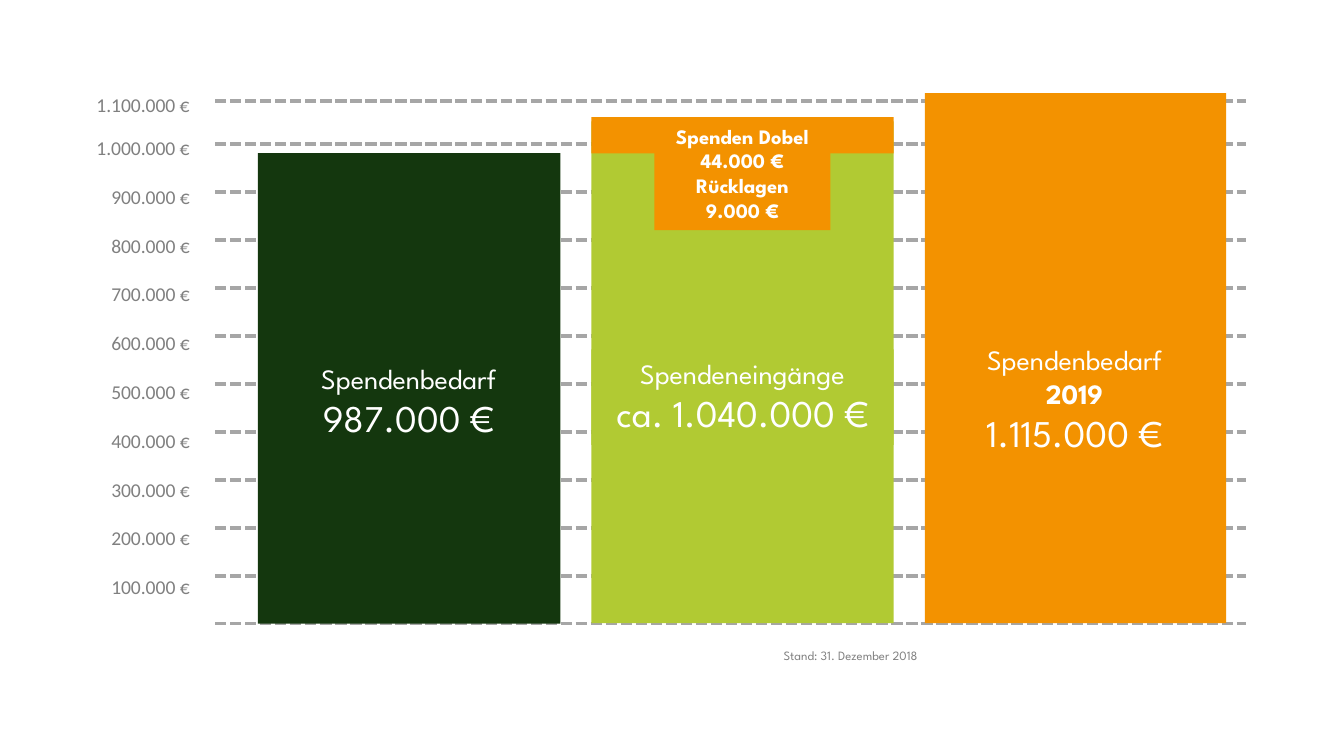
"""Build the donation slide: three bars against a dashed euro scale."""
from pptx import Presentation
from pptx import util as u
from pptx.dml.color import RGBColor
from pptx.enum import dml, shapes, text
from lxml import etree

WHITE, GREY, LINE_GREY = "FFFFFF", "808080", "A6A6A6"
DARK, LIME, ORANGE = "14370E", "B1CA33", "F39200"
DISPLAY, PLAIN = "League Spartan", "Calibri"

SCALE = [f"{step}00.000 €" for step in range(1, 10)] + ["1.000.000 €"]
TOP_LABEL = ("1.100.000 €", 46.1)
LINE_TOPS = [334.1 - 25.7 * step for step in range(11)] + [54]
LABEL_TOPS = [304.6 - 26.15 * step for step in range(10)]

BARS = [
    (DARK, (138.2, 82.1, 162, 252)),
    (ORANGE, (495.4, 49.9, 161.5, 284)),
    (LIME, (316.8, 65, 162, 268.9)),
    (ORANGE, (316.8, 62.8, 162, 19.4)),
]
CAPTIONS = [
    ((138.2, 190.1, 161.5, 49.7), None,
     [[("Spendenbedarf", 15, False), ("987.000 €", 20.2, False)]]),
    ((504, 180, 143.3, 68.4), None,
     [[("Spendenbedarf", 15, False), ("2019", 15, True), ("1.115.000 €", 20.2, False)]]),
    ((316.8, 187.2, 162, 51.1), LIME,
     [[("Spendeneingänge", 15, False)], [("ca. 1.040.000 €", 20.2, False)]]),
    ((350.6, 62.8, 94.3, 60.5), ORANGE,
     [[("Spenden Dobel", 11, True)], [("44.000 €", 11, True)],
      [("Rücklagen", 11, True), ("9.000 €", 11, True)]]),
]
DATE_NOTE = "Stand: 31. Dezember 2018"


def color(value):
    return RGBColor.from_string(value)


def add_dashed_line(page, top):
    line = page.shapes.add_connector(
        shapes.MSO_CONNECTOR.STRAIGHT, u.Pt(115.2), u.Pt(top), u.Pt(667.4), u.Pt(top))
    line.line.color.rgb = color(LINE_GREY)
    line.line.width = u.Pt(2)
    line.line.dash_style = dml.MSO_LINE.SQUARE_DOT
    properties = line.line._get_or_add_ln().getparent()
    namespace = etree.QName(properties[0]).namespace
    etree.SubElement(properties, f"{{{namespace}}}effectLst")


def add_bar(page, fill, place):
    bar = page.shapes.add_shape(shapes.MSO_SHAPE.RECTANGLE, *map(u.Pt, place))
    bar.shadow.inherit = False
    bar.fill.solid()
    bar.fill.fore_color.rgb = color(fill)
    bar.line.fill.background()
    return bar


def add_text(page, paragraphs, place, *, font=DISPLAY, ink=WHITE, fill=None,
             align=text.PP_ALIGN.CENTER, wrap=True):
    box = add_bar(page, fill, place) if fill else page.shapes.add_textbox(*map(u.Pt, place))
    frame = box.text_frame
    frame.word_wrap = wrap
    frame.auto_size = text.MSO_AUTO_SIZE.SHAPE_TO_FIT_TEXT
    frame.vertical_anchor = text.MSO_ANCHOR.TOP
    for number, lines in enumerate(paragraphs):
        para = frame.add_paragraph() if number else frame.paragraphs[0]
        para.alignment = align
        for position, (words, size, bold) in enumerate(lines):
            if position:
                para.add_line_break()
            span = para.add_run()
            span.text = words
            span.font.name = font
            span.font.size = u.Pt(size)
            span.font.bold = bold
            span.font.color.rgb = color(ink)


def main():
    deck = Presentation()
    deck.slide_width, deck.slide_height = u.Pt(720), u.Pt(405)
    page = deck.slides.add_slide(deck.slide_layouts[6])
    for top in LINE_TOPS:
        add_dashed_line(page, top)
    for label, top in [*zip(SCALE, LABEL_TOPS), TOP_LABEL]:
        add_text(page, [[(label, 10.5, False)]], (25.9, top, 82.8, 20.2),
                 font=PLAIN, ink=GREY, align=text.PP_ALIGN.RIGHT)
    for fill, place in BARS:
        add_bar(page, fill, place)
    for place, fill, paragraphs in CAPTIONS:
        add_text(page, paragraphs, place, fill=fill)
    add_text(page, [[(DATE_NOTE, 6.8, False)]], (401, 343.4, 97.9, 15.1),
             ink=GREY, align=text.PP_ALIGN.RIGHT, wrap=False)
    deck.save("out.pptx")


if __name__ == "__main__":
    main()
